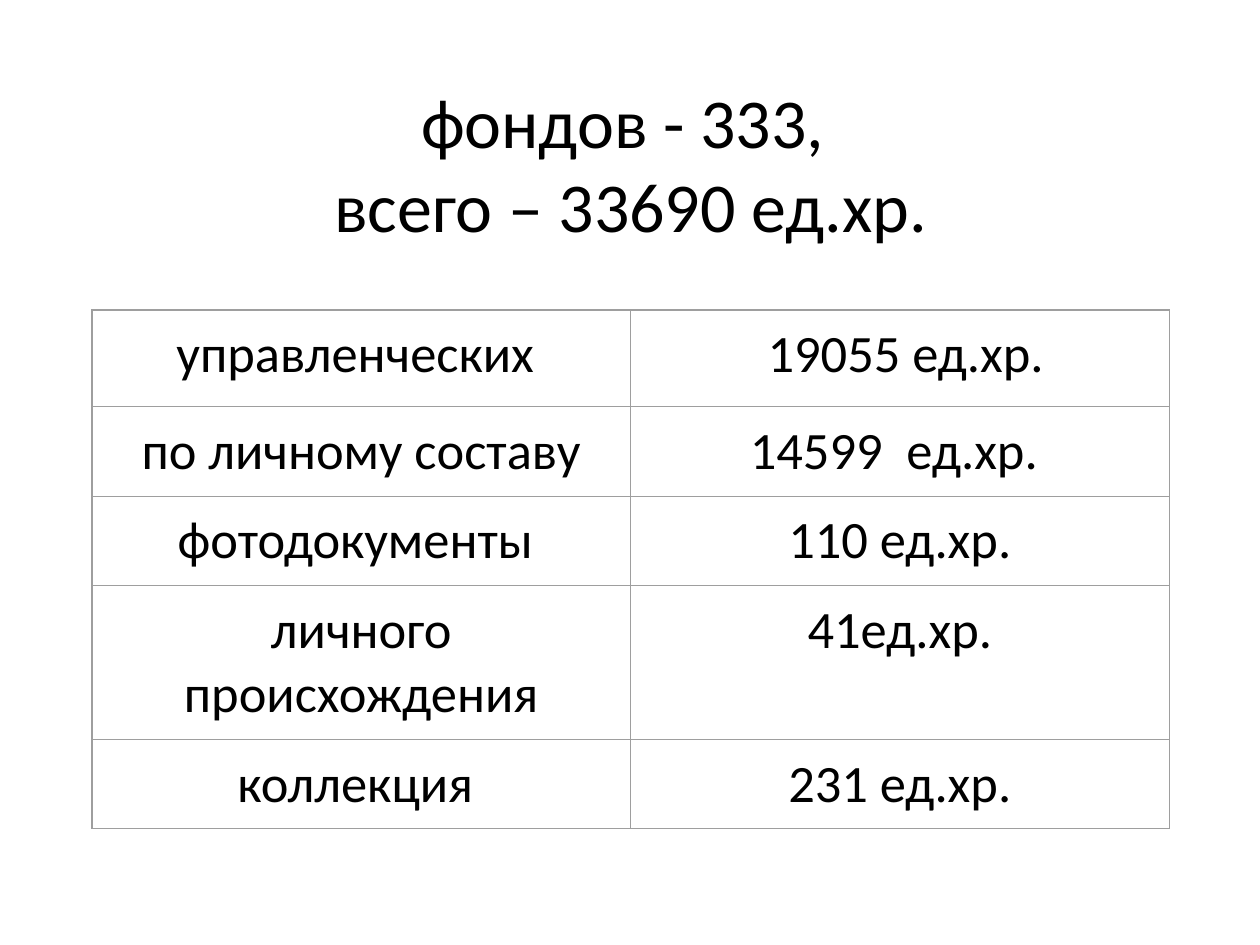
from lxml import etree
from pptx import Presentation
from pptx import util as u
from pptx.dml.color import RGBColor
from pptx.enum import text
from pptx.oxml.ns import qn

WIDTH, HEIGHT = 10, 7.5
LEFT, CONTENT_WIDTH = 0.073 * WIDTH, 0.855 * WIDTH
INSET = 0.1
BLACK, GREY = "000000", "9E9E9E"
HEADING = ["фондов - 333, ", "всего – 33690 ед.хр."]
HOLDINGS = [
    ("управленческих ", " 19055 ед.хр."),
    ("по личному составу", "14599  ед.хр. "),
    ("фотодокументы ", "110 ед.хр."),
    ("личного происхождения", "41ед.хр."),
    ("коллекция ", "231 ед.хр."),
]
ROW_HEIGHTS = [0.77, 0.71, 0.71, 1.22, 0.71]


def colour(value):
    return RGBColor.from_string(value)


def set_values(target, values):
    for name, value in values.items():
        setattr(target, name, value)


def write(para, words, size):
    para.alignment = text.PP_ALIGN.CENTER
    span = para.add_run()
    span.text = words
    set_values(span.font, {"name": "Calibri", "size": u.Pt(size), "bold": False})
    span.font.color.rgb = colour(BLACK)


def margins():
    sides = ("left", "right", "top", "bottom")
    return {f"margin_{side}": u.Inches(INSET) for side in sides}


def add_borders(cell):
    # Border lines come before the fill in the cell properties
    properties = cell._tc.get_or_add_tcPr()
    for place, side in enumerate(("lnL", "lnR", "lnT", "lnB")):
        line = etree.Element(qn(f"a:{side}"), w=str(u.Pt(0.75)))
        fill = etree.SubElement(line, qn("a:solidFill"))
        etree.SubElement(fill, qn("a:srgbClr"), val=GREY)
        properties.insert(place, line)


def add_heading(page, left, top, width, height):
    box = page.shapes.add_textbox(*map(u.Inches, (left, top, width, height)))
    frame = box.text_frame
    set_values(frame, {"word_wrap": True,
                       "vertical_anchor": text.MSO_ANCHOR.TOP,
                       "auto_size": text.MSO_AUTO_SIZE.SHAPE_TO_FIT_TEXT,
                       **margins()})
    for index, words in enumerate(HEADING):
        para = frame.add_paragraph() if index else frame.paragraphs[0]
        write(para, words, 40)


def add_holdings(page, left, top, width):
    box = page.shapes.add_table(
        len(HOLDINGS), len(HOLDINGS[0]),
        *map(u.Inches, (left, top, width, sum(ROW_HEIGHTS))))
    table = box.table
    set_values(table, {"first_row": False, "horz_banding": False})
    for row, height, entries in zip(table.rows, ROW_HEIGHTS, HOLDINGS):
        row.height = u.Inches(height)
        for cell, words in zip(row.cells, entries):
            set_values(cell, {"vertical_anchor": text.MSO_ANCHOR.TOP, **margins()})
            cell.fill.background()
            add_borders(cell)
            write(cell.text_frame.paragraphs[0], words, 30)


def main():
    deck = Presentation()
    set_values(deck, {"slide_width": u.Inches(WIDTH),
                      "slide_height": u.Inches(HEIGHT)})
    page = deck.slides.add_slide(deck.slide_layouts[6])
    # Table of holdings, then the heading with the totals
    add_holdings(page, LEFT, 0.328 * HEIGHT, CONTENT_WIDTH)
    add_heading(page, LEFT, 0.07 * HEIGHT, CONTENT_WIDTH, 0.207 * HEIGHT)
    deck.save("out.pptx")


if __name__ == "__main__":
    main()
